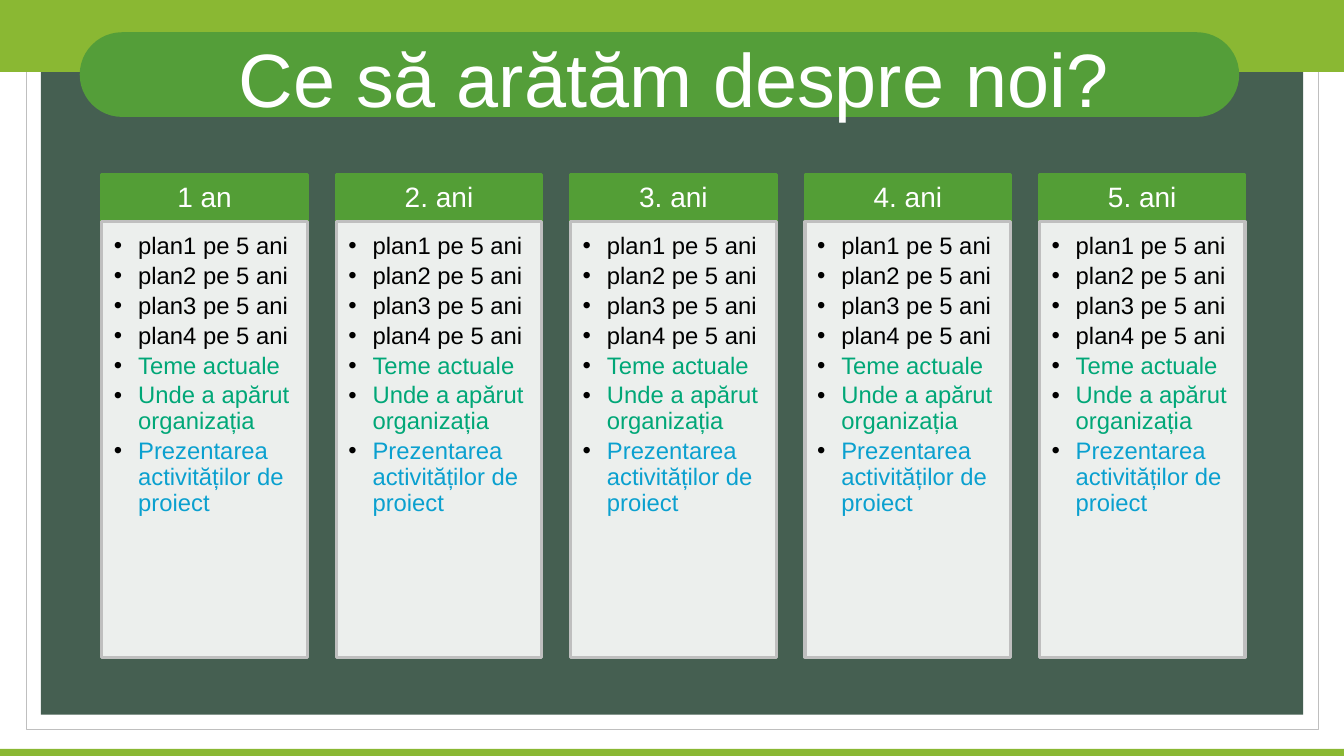
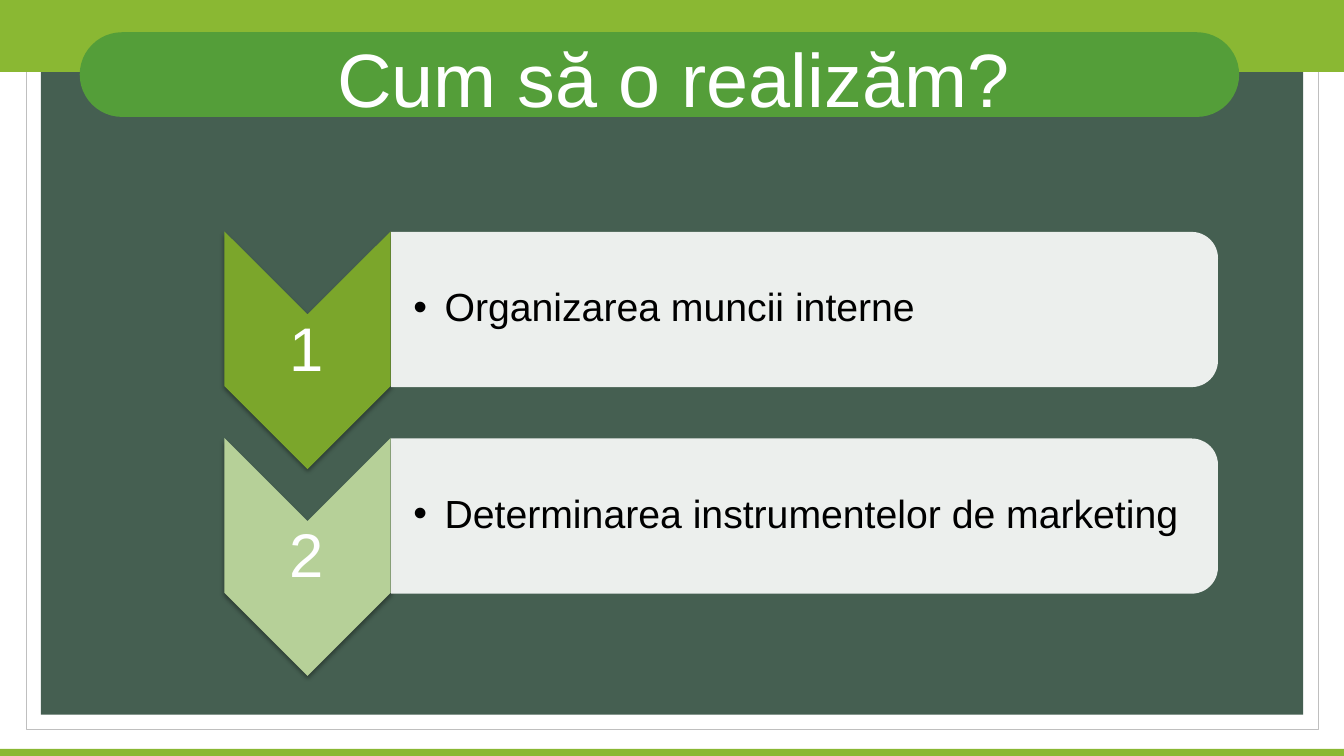
from lxml import etree
from pptx import Presentation
from pptx.dml.color import RGBColor
from pptx.enum.shapes import MSO_SHAPE
from pptx.enum.text import MSO_ANCHOR, MSO_AUTO_SIZE, PP_ALIGN
from pptx.oxml.ns import qn
from pptx.util import Inches, Pt

RECTANGLE = MSO_SHAPE.RECTANGLE
PILL = MSO_SHAPE.ROUNDED_RECTANGLE
CHEVRON = MSO_SHAPE.CHEVRON
PANEL = MSO_SHAPE.ROUND_2_SAME_RECTANGLE
TOP, MIDDLE = MSO_ANCHOR.TOP, MSO_ANCHOR.MIDDLE
LEFT, CENTER = PP_ALIGN.LEFT, PP_ALIGN.CENTER
NO_AUTOFIT = MSO_AUTO_SIZE.NONE

WHITE, BLACK, GRAY = "FFFFFF", "000000", "BFBFBF"
SLATE, LIME, GREEN, HEADER_GREEN = "455F51", "8AB833", "549E39", "539E36"
TEAL, BLUE = "00A777", "0AA0CF"
FONT = "Arial"
colour = RGBColor.from_string

presentation = Presentation()
presentation.slide_width = Inches(13.33)
presentation.slide_height = Inches(7.5)
COLUMN = presentation.slide_width / 100
ROW = presentation.slide_height / 100


def add_block(slide, preset, left, top, width, height, fill=None, opacity=100,
              line=None, line_width=1, adjustments=(), rotation=0):
    box = [round(left * COLUMN), round(top * ROW), round(width * COLUMN), round(height * ROW)]
    if preset is None:
        return slide.shapes.add_textbox(*box)
    shape = slide.shapes.add_shape(preset, *box)
    shape.rotation = rotation
    for index, value in enumerate(adjustments):
        shape.adjustments[index] = value
    shape.fill.solid()
    shape.fill.fore_color.rgb = colour(fill)
    if opacity < 100:
        fill_colour = shape.element.spPr.find(qn("a:solidFill")).find(qn("a:srgbClr"))
        etree.SubElement(fill_colour, qn("a:alpha"), val=str(opacity * 1000))
    if line:
        shape.line.color.rgb = colour(line)
        shape.line.width = Pt(line_width)
    else:
        shape.line.fill.background()
    shape.shadow.inherit = False
    return shape


def write(shape, text, size=17, color=BLACK, align=LEFT, anchor=MIDDLE,
          margins=(0.1, 0.05, 0.1, 0.05), spacing=0.9, before=0, bullet_indent=0):
    frame = shape.text_frame
    frame.word_wrap = True
    frame.auto_size = NO_AUTOFIT
    frame.vertical_anchor = anchor
    frame.margin_left, frame.margin_top, frame.margin_right, frame.margin_bottom = map(Inches, margins)
    paragraph = frame.add_paragraph() if frame.text else frame.paragraphs[0]
    paragraph.alignment = align
    paragraph.line_spacing = spacing
    paragraph.space_before = Pt(before)
    run = paragraph.add_run()
    run.text = text
    run.font.name = FONT
    run.font.size = Pt(size)
    run.font.color.rgb = colour(color)
    if bullet_indent:
        properties = paragraph._p.get_or_add_pPr()
        properties.set("marL", str(Inches(bullet_indent)))
        properties.set("indent", str(-Inches(bullet_indent)))
        bullet_colour = etree.SubElement(properties, qn("a:buClr"))
        etree.SubElement(bullet_colour, qn("a:srgbClr"), val=BLACK)
        etree.SubElement(properties, qn("a:buFont"), typeface=FONT)
        etree.SubElement(properties, qn("a:buChar"), char="•")


layout = presentation.slide_layouts[5]
for placeholder in list(layout.placeholders)[1:]:
    layout.shapes.element.remove(placeholder.element)

slides = []
for title_text in ("Ce să arătăm despre noi?", "Cum să o realizăm?"):
    slide = presentation.slides.add_slide(layout)
    title = slide.shapes.title
    title.left, title.top = round(2.63 * COLUMN), round(4.93 * ROW)
    title.width, title.height = round(94.97 * COLUMN), round(10.53 * ROW)
    write(title, title_text, size=54, color=WHITE, align=CENTER, spacing=1.0, before=9)
    slides.append(slide)
plan_slide, steps_slide = slides

backdrop = [
    (RECTANGLE, (1.95, 3.47, 96.17, 93.07), dict(fill=WHITE, line=GRAY, line_width=0.75)),
    (RECTANGLE, (3.05, 5.47, 93.92, 89.07), dict(fill=SLATE)),
    (RECTANGLE, (0, 0, 100, 9.5), dict(fill=LIME)),
    (PILL, (5.93, 4.27, 86.27, 11.2), dict(fill=GREEN, adjustments=(0.5,))),
    (RECTANGLE, (0, 99.07, 100, 0.93), dict(fill=LIME)),
]
for preset, box, style in backdrop:
    band = add_block(plan_slide, preset, *box, **style)
    layout.placeholders[0].element.addprevious(band.element)

plan_lines = [(f"plan{number} pe 5 ani", BLACK) for number in range(1, 5)] + [
    ("Teme actuale", TEAL),
    ("Unde a apărut organizația", TEAL),
    ("Prezentarea activităților de proiect", BLUE),
]
for index, heading in enumerate(("1 an", "2. ani", "3. ani", "4. ani", "5. ani")):
    left = 7.58 + index * 17.44
    header = add_block(plan_slide, RECTANGLE, left, 23.07, 15.3, 6.27,
                       fill=HEADER_GREEN, line=HEADER_GREEN, line_width=2)
    write(header, heading, size=20, color=WHITE, align=CENTER, margins=(0.16, 0.09, 0.16, 0.09))
    card = add_block(plan_slide, RECTANGLE, left, 29.33, 15.3, 57.6,
                     fill=WHITE, opacity=90, line=GRAY, line_width=2.25)
    for position, (text, color) in enumerate(plan_lines):
        write(card, text, color=color, anchor=TOP, margins=(0.12, 0.12, 0.16, 0.17),
              before=3 if position else 0, bullet_indent=0.24)

steps = [
    ("Organizarea muncii interne", "7BA62B"),
    ("Determinarea instrumentelor de marketing", "B6D098"),
]
for index, (text, color) in enumerate(steps):
    offset = index * 27.33
    chevron = add_block(steps_slide, CHEVRON, 14.03, 35.33 + offset, 17.7, 22,
                        fill=color, adjustments=(0.5,), rotation=90)
    effects = chevron.element.spPr.find(qn("a:effectLst"))
    shadow = etree.SubElement(effects, qn("a:outerShdw"), blurRad=str(Pt(3.1)),
                              dist=str(Pt(1.8)), dir="5400000", rotWithShape="0")
    shadow_colour = etree.SubElement(shadow, qn("a:srgbClr"), val=BLACK)
    etree.SubElement(shadow_colour, qn("a:alpha"), val="35000")
    number = add_block(steps_slide, None, 16.65, 41.73 + offset, 12.38, 9.47)
    write(number, str(index + 1), size=44, color=WHITE, align=CENTER, margins=(0.03,) * 4)
    add_block(steps_slide, PANEL, 54.09, offset - 13.73, 11.55, 109.33,
              fill=WHITE, opacity=90, adjustments=(0.17, 0), rotation=90)
    caption = add_block(steps_slide, None, 29.11, 31.6 + offset, 60.92, 18.53)
    write(caption, text, size=28, margins=(0.22, 0.02, 0.02, 0.02), bullet_indent=0.31)

presentation.save("out.pptx")
